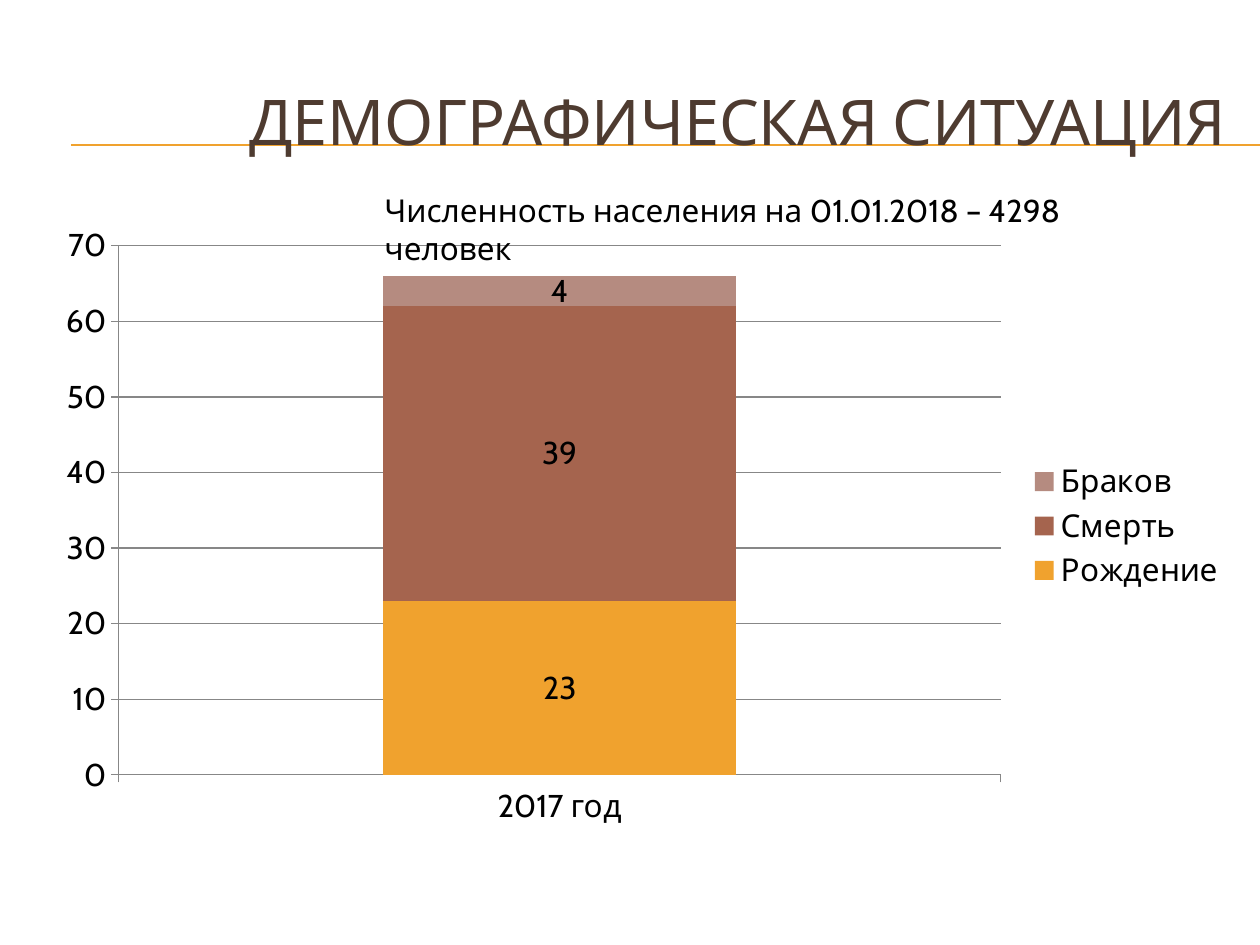
from dataclasses import dataclass

from pptx import Presentation
from pptx.chart.data import CategoryChartData
from pptx.dml.color import RGBColor
from pptx.enum.chart import XL_CHART_TYPE, XL_LABEL_POSITION, XL_LEGEND_POSITION, XL_TICK_MARK
from pptx.enum.shapes import MSO_CONNECTOR
from pptx.enum.text import MSO_ANCHOR, PP_ALIGN
from pptx.oxml.ns import qn
from pptx.util import Pt
from lxml.etree import SubElement


@dataclass(frozen=True)
class Theme:
    font: str = "Cabin"
    heading: str = "4E3B30"
    ink: str = "000000"
    accent: str = "F0A22E"
    grid: str = "878787"
    births: str = "F0A22E"
    deaths: str = "A5644E"
    marriages: str = "B58B80"
    title_size: int = 36
    text_size: int = 18


class SlideBuilder:
    def __init__(self, slide, theme):
        self.slide = slide
        self.theme = theme

    def style(self, font, size, color):
        font.name = self.theme.font
        font.size = Pt(size)
        font.color.rgb = RGBColor.from_string(color)

    def place(self, shape, box):
        shape.left, shape.top, shape.width, shape.height = map(Pt, box)

    def rule(self, left, right, y):
        line = self.slide.shapes.add_connector(
            MSO_CONNECTOR.STRAIGHT, Pt(left), Pt(y), Pt(right), Pt(y))
        line.line.color.rgb = RGBColor.from_string(self.theme.accent)
        line.line.width = Pt(0.75)
        SubElement(line._element.spPr, qn("a:effectLst"))
        self.slide.shapes._spTree.insert(2, line._element)

    def title(self, text, box):
        heading = self.slide.shapes.title
        self.place(heading, box)
        frame = heading.text_frame
        frame.text = text
        frame.vertical_anchor = MSO_ANCHOR.MIDDLE
        paragraph = frame.paragraphs[0]
        paragraph.alignment = PP_ALIGN.RIGHT
        self.style(paragraph.runs[0].font, self.theme.title_size, self.theme.heading)

    def note(self, text, box):
        frame = self.slide.shapes.add_textbox(*map(Pt, box)).text_frame
        frame.word_wrap = True
        frame.text = text
        self.style(frame.paragraphs[0].runs[0].font, self.theme.text_size, self.theme.ink)

    def stacked_chart(self, categories, series, box):
        data = CategoryChartData()
        data.categories = categories
        for name, values, _ in series:
            data.add_series(name, values)
        chart = self.slide.shapes.add_chart(
            XL_CHART_TYPE.COLUMN_STACKED, *map(Pt, box), data).chart
        self.style(chart.font, self.theme.text_size, self.theme.ink)
        chart.has_title = False
        chart.has_legend = True
        chart.legend.position = XL_LEGEND_POSITION.RIGHT
        chart.legend.include_in_layout = False

        grid_color = RGBColor.from_string(self.theme.grid)
        value_axis = chart.value_axis
        value_axis.minimum_scale, value_axis.maximum_scale = 0, 70
        value_axis.major_unit = 10
        value_axis.has_major_gridlines = True
        for line in (value_axis.format.line, chart.category_axis.format.line,
                     value_axis.major_gridlines.format.line):
            line.color.rgb = grid_color
            line.width = Pt(0.75)
        for axis in (value_axis, chart.category_axis):
            axis.major_tick_mark = XL_TICK_MARK.OUTSIDE

        plot = chart.plots[0]
        plot.gap_width = 150
        plot.overlap = 100
        plot.vary_by_categories = False
        for bars, (_, _, color) in zip(plot.series, series):
            bars.format.fill.solid()
            bars.format.fill.fore_color.rgb = RGBColor.from_string(color)
            bars.data_labels.show_value = True
            bars.data_labels.position = XL_LABEL_POSITION.CENTER


def main():
    theme = Theme()
    deck = Presentation()
    deck.slide_width, deck.slide_height = Pt(720), Pt(540)
    builder = SlideBuilder(deck.slides.add_slide(deck.slide_layouts[5]), theme)
    for y in (82.8, 83.2):
        builder.rule(40.5, 720, y)
    builder.title("ДЕМОГРАФИЧЕСКАЯ СИТУАЦИЯ", (24, 36, 684, 66))
    builder.stacked_chart(
        ["2017 год"],
        [("Рождение", [23], theme.births),
         ("Смерть", [39], theme.deaths),
         ("Браков", [4], theme.marriages)],
        (24, 122.4, 684, 356.4))
    builder.note("Численность населения на 01.01.2018 – 4298 человек",
                 (212.6, 105.6, 472.4, 29))
    deck.save("out.pptx")


if __name__ == "__main__":
    main()
